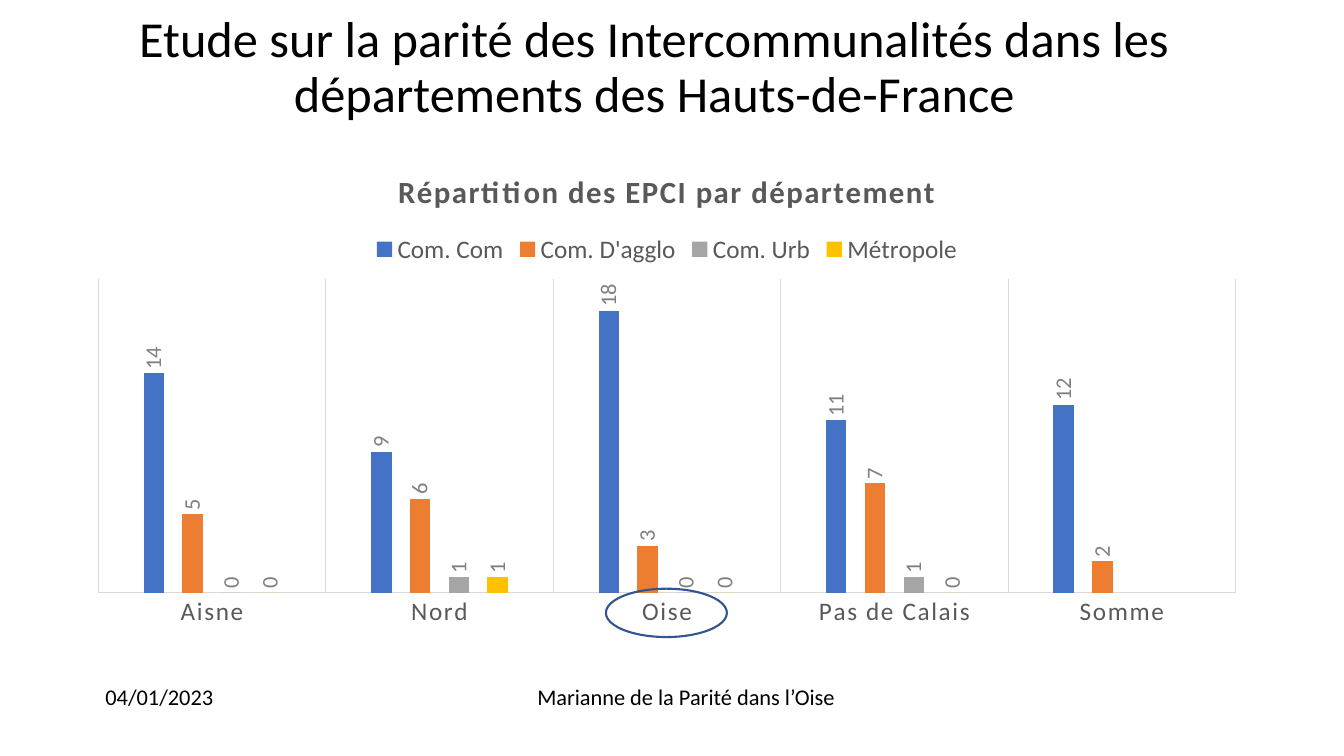
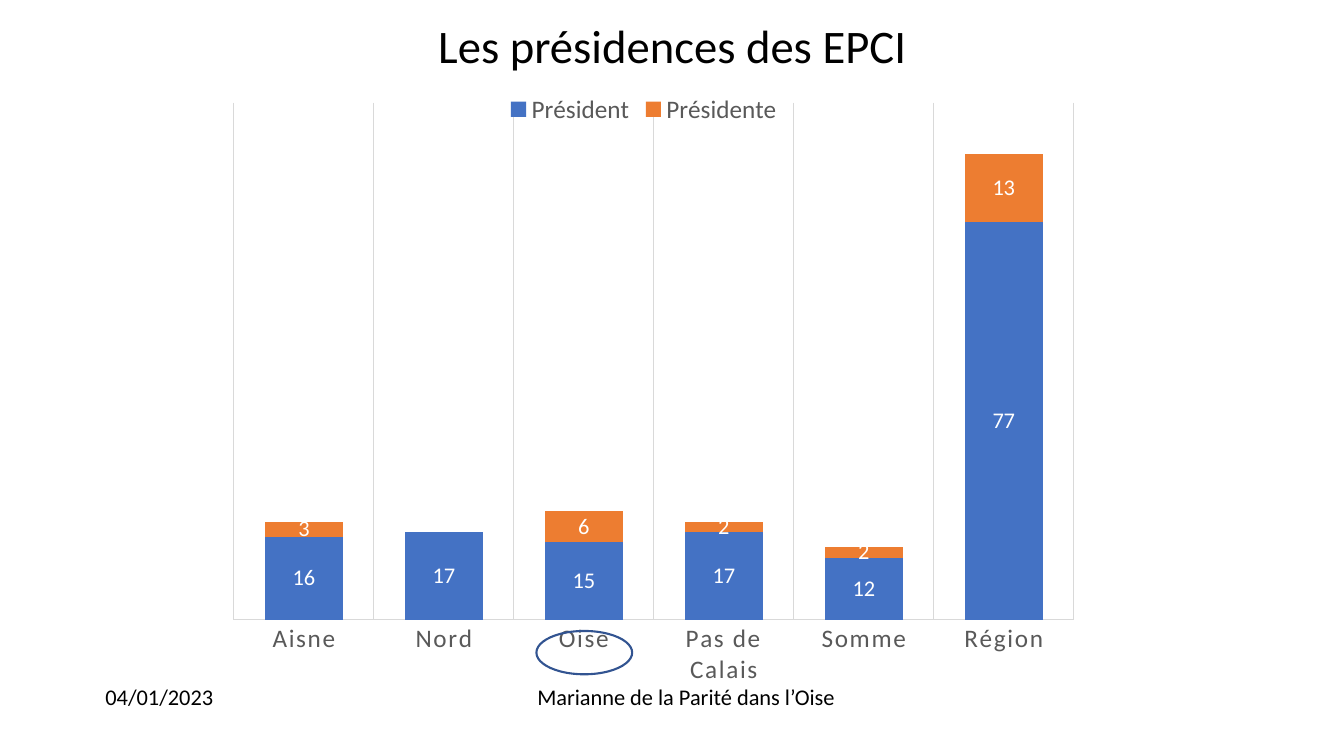
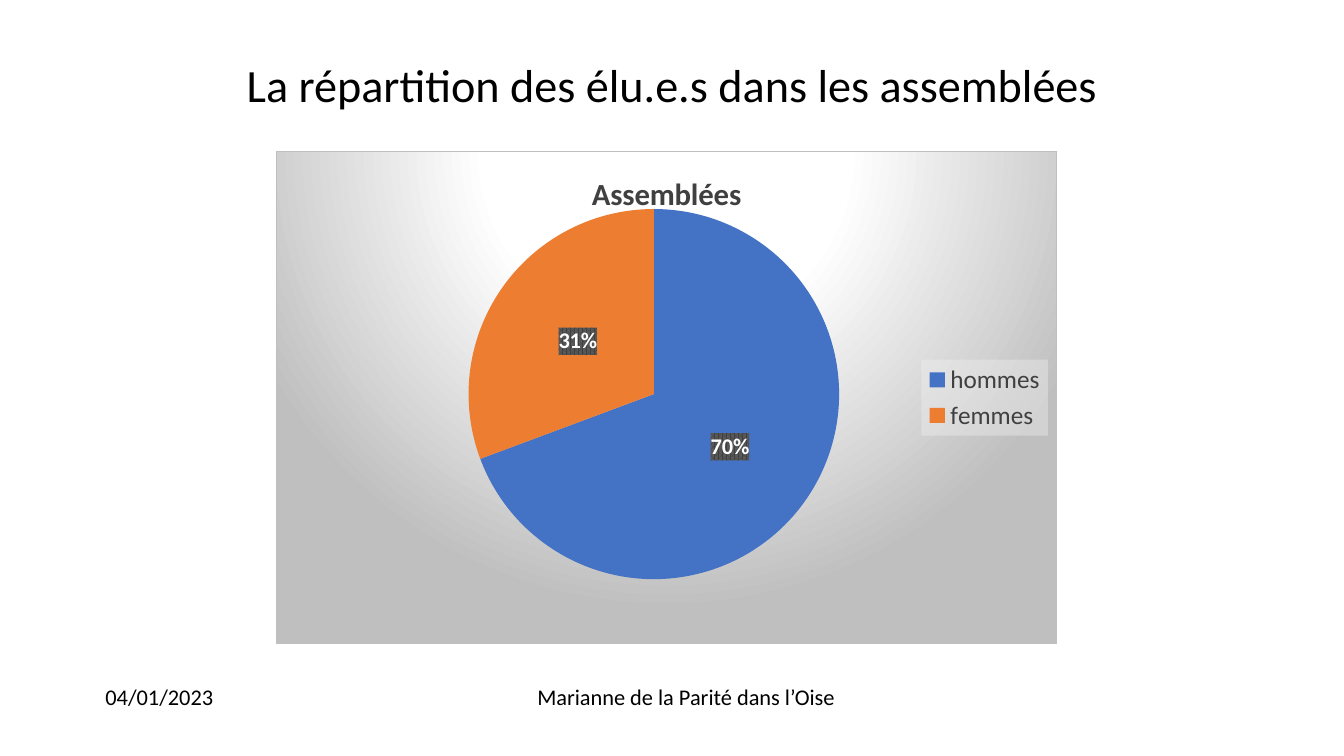
from dataclasses import dataclass

from pptx import Presentation
from pptx import util as u
from pptx.chart.data import CategoryChartData
from pptx.dml.color import RGBColor
from pptx.enum import chart as charts, shapes, text
from pptx.oxml import parse_xml
from pptx.oxml.ns import nsdecls

PX = 9144  # EMU per px, 100 px to the inch


@dataclass(frozen=True)
class Theme:
    font: str = "Calibri"
    ink: str = "000000"
    soft: str = "595959"
    dark: str = "404040"
    value: str = "808080"
    rule: str = "D9D9D9"
    edge: str = "BFBFBF"
    ring: str = "325491"
    pale: str = "F2F2F2"
    white: str = "FFFFFF"
    palette: tuple = ("4472C4", "ED7D31", "A5A5A5", "FFC000")
    base: int = 10
    small: int = 16
    label: int = 18
    heading: int = 22
    tracking: int = 120  # hundredths of a point


THEME = Theme()

# Content
FOOTERS = [
    ("04/01/2023", (27, 673, 262, 37)),
    ("Marianne de la Parité dans l’Oise", (454, 673, 453, 37)),
]
DEPARTMENTS = ["Aisne", "Nord", "Oise", "Pas de Calais", "Somme"]
SLIDES = [
    dict(
        title="Etude sur la parité des Intercommunalités dans les départements des Hauts-de-France",
        title_box=(74, -18, 1150, 145), title_size=36, title_spacing=0.9,
        ring=(601, 584, 120, 48),
        chart=dict(
            kind="COLUMN_CLUSTERED", box=(74, 149, 1175, 483),
            heading="Répartition des EPCI par département",
            categories=DEPARTMENTS,
            series={
                "Com. Com": [14, 9, 18, 11, 12],
                "Com. D'agglo": [5, 6, 3, 7, 2],
                "Com. Urb": [0, 1, 0, 1, None],
                "Métropole": [0, 1, 0, 0, None],
            },
            gap=444, overlap=-90, maximum=20, legend="TOP",
            labels=dict(position="OUTSIDE_END", color=THEME.value, turn=-90),
        ),
    ),
    dict(
        title="Les présidences des EPCI",
        title_box=(92, 22, 1150, 55), title_size=33.3, title_spacing=0.8,
        ring=(532, 626, 95, 43),
        chart=dict(
            kind="COLUMN_STACKED", box=(189, 81, 899, 609),
            categories=DEPARTMENTS + ["Région"],
            series={
                "Président": [16, 17, 15, 17, 12, 77],
                "Présidente": [3, None, 6, 2, 2, 13],
            },
            gap=79, overlap=100, maximum=100, legend="TOP",
            plot_box=(43, 21, 833, 513),
            labels=dict(position="CENTER", color=THEME.white),
        ),
    ),
    dict(
        title="La répartition des élu.e.s dans les assemblées",
        title_box=(70, 44, 1193, 72), title_size=33, title_spacing=0.9,
        chart=dict(
            kind="PIE", box=(274, 150, 774, 489), heading="Assemblées",
            categories=["hommes", "femmes"],
            series={"Assemblées": [70, 31]},
            legend="RIGHT", plot_box=(183, 57, 383, 368),
            labels=dict(position="CENTER", color=THEME.white, bold=True,
                        number_format='0"%"'),
        ),
    ),
]

# Fills that python-pptx cannot set on chart parts
SPOTLIGHT = f"""<a:gradFill><a:gsLst>
<a:gs pos="0"><a:srgbClr val="{THEME.white}"/></a:gs>
<a:gs pos="39000"><a:srgbClr val="{THEME.white}"/></a:gs>
<a:gs pos="100000"><a:srgbClr val="{THEME.edge}"/></a:gs></a:gsLst>
<a:path path="circle"><a:fillToRect l="50000" t="-80000" r="50000" b="180000"/></a:path></a:gradFill>
<a:ln w="9525"><a:solidFill><a:srgbClr val="{THEME.edge}"/></a:solidFill></a:ln>"""
HATCH = f"""<a:pattFill prst="pct75"><a:fgClr><a:srgbClr val="{THEME.dark}"/></a:fgClr>
<a:bgClr><a:srgbClr val="{THEME.soft}"/></a:bgClr></a:pattFill>"""
VEIL = f"""<a:solidFill><a:srgbClr val="{THEME.pale}"><a:alpha val="39000"/></a:srgbClr></a:solidFill>"""


def emu(box):
    return [u.Emu(length * PX) for length in box]


def style(font, size, color, bold=False):
    font.name, font.size, font.bold = THEME.font, u.Pt(size), bold
    font.color.rgb = RGBColor.from_string(color)


def write(frame, words, size=THEME.small, color=THEME.ink, bold=False,
          line_spacing=None, tracking=0):
    paragraph = frame.paragraphs[0]
    paragraph.alignment = text.PP_ALIGN.CENTER
    paragraph.line_spacing = line_spacing
    run = paragraph.add_run()
    run.text = words
    style(run.font, size, color, bold)
    if tracking:
        run._r.get_or_add_rPr().set("spc", str(tracking))


def add_text(slide, words, box, anchor=text.MSO_ANCHOR.TOP, **form):
    frame = slide.shapes.add_textbox(*emu(box)).text_frame
    frame.word_wrap = True
    frame.vertical_anchor = anchor
    write(frame, words, **form)


def draw_line(line, color, width=0.75):
    line.color.rgb = RGBColor.from_string(color)
    line.width = u.Pt(width)


def paint(chart, part, fill):
    """Give a chart part its fill, just ahead of its text properties."""
    for properties in chart.element.xpath(part + "/c:txPr"):
        properties.addprevious(parse_xml(f'<c:spPr {nsdecls("c", "a")}>{fill}</c:spPr>'))


def place_plot(chart, plot_box, chart_box):
    """Place the inner plot, given in px from the corner of the chart."""
    plot = chart.element.xpath("//c:plotArea")[0]
    for layout in plot.xpath("c:layout"):
        plot.remove(layout)
    sizes = "".join(f'<c:{name} val="{length / whole}"/>' for name, length, whole
                    in zip("xywh", plot_box, chart_box[2:] * 2))
    plot.insert(0, parse_xml(
        f'<c:layout {nsdecls("c")}><c:manualLayout><c:layoutTarget val="inner"/>'
        f'<c:xMode val="edge"/><c:yMode val="edge"/>{sizes}</c:manualLayout></c:layout>'))


def label_series(series, position, color, bold=False, turn=0, number_format=None):
    labels = series.data_labels
    style(labels.font, THEME.small, color, bold)
    labels.position = getattr(charts.XL_LABEL_POSITION, position)
    labels.show_value = True
    if number_format:
        labels.number_format, labels.number_format_is_linked = number_format, False
    if turn:
        for body in series._element.xpath("c:dLbls/c:txPr/a:bodyPr"):
            body.set("rot", str(turn * 60000))
            body.set("vert", "horz")


def format_axes(chart, maximum):
    values, names = chart.value_axis, chart.category_axis
    values.minimum_scale, values.maximum_scale = 0, maximum
    values.has_major_gridlines = False
    values.visible = False
    names.major_tick_mark = charts.XL_TICK_MARK.NONE
    names.has_major_gridlines = True
    draw_line(names.major_gridlines.format.line, THEME.rule)
    draw_line(names.format.line, THEME.rule)
    style(names.tick_labels.font, THEME.label, THEME.soft)
    for properties in chart.element.xpath("//c:catAx/c:txPr//a:defRPr"):
        properties.set("spc", str(THEME.tracking))


def add_chart(slide, kind, box, categories, series, legend, labels,
              heading=None, plot_box=None, gap=None, overlap=None, maximum=None):
    data = CategoryChartData()
    data.categories = categories
    for name, values in series.items():
        data.add_series(name, values)
    chart = slide.shapes.add_chart(
        getattr(charts.XL_CHART_TYPE, kind), *emu(box), data).chart
    style(chart.font, THEME.base, THEME.ink)
    pie = kind == "PIE"
    color = THEME.dark if pie else THEME.soft

    # Heading and legend
    chart.has_title = heading is not None
    if heading:
        write(chart.chart_title.text_frame, heading, size=THEME.heading,
              color=color, bold=True, tracking=0 if pie else THEME.tracking)
    chart.has_legend = True
    chart.legend.position = getattr(charts.XL_LEGEND_POSITION, legend)
    chart.legend.include_in_layout = False
    style(chart.legend.font, THEME.label, color)

    # Series colours and labels
    plot = chart.plots[0]
    plot.vary_by_categories = pie
    for one in plot.series:
        label_series(one, **labels)
    parts = ([plot.series[0].points[i] for i in range(len(categories))]
             if pie else plot.series)
    for part, fill in zip(parts, THEME.palette):
        part.format.fill.solid()
        part.format.fill.fore_color.rgb = RGBColor.from_string(fill)

    # Layout and backgrounds
    if plot_box:
        place_plot(chart, plot_box, box)
    if pie:
        paint(chart, "/c:chartSpace", SPOTLIGHT)
        paint(chart, "//c:legend", VEIL)
        paint(chart, "//c:ser/c:dLbls", HATCH)
    else:
        plot.gap_width, plot.overlap = gap, overlap
        format_axes(chart, maximum)


def add_ring(slide, box):
    ring = slide.shapes.add_shape(shapes.MSO_SHAPE.OVAL, *emu(box))
    ring.shadow.inherit = False
    ring.fill.background()
    draw_line(ring.line, THEME.ring, 1.5)


def main():
    presentation = Presentation()
    presentation.slide_width, presentation.slide_height = emu((1333, 750))
    for content in SLIDES:
        slide = presentation.slides.add_slide(presentation.slide_layouts[6])
        for words, box in FOOTERS:
            add_text(slide, words, box)
        add_text(slide, content["title"], content["title_box"],
                 anchor=text.MSO_ANCHOR.BOTTOM, size=content["title_size"],
                 line_spacing=content["title_spacing"])
        add_chart(slide, **content["chart"])
        if "ring" in content:
            add_ring(slide, content["ring"])
    presentation.save("out.pptx")


if __name__ == "__main__":
    main()
